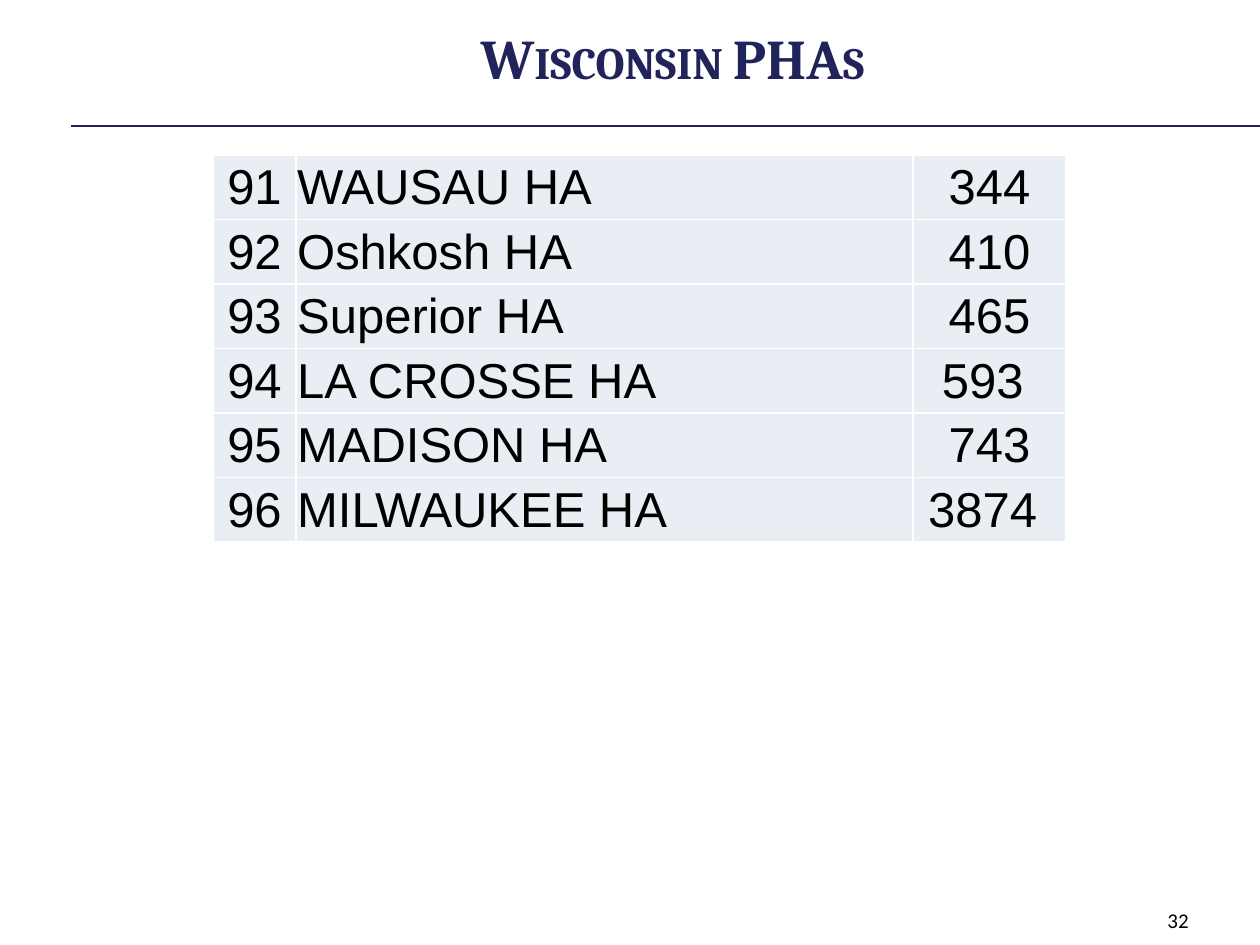
from dataclasses import dataclass

from lxml import etree
from pptx import Presentation
from pptx.dml.color import RGBColor
from pptx.enum.shapes import MSO_CONNECTOR
from pptx.enum.text import MSO_ANCHOR, PP_ALIGN
from pptx.oxml.ns import qn
from pptx.util import Emu, Inches, Pt

STRAIGHT = MSO_CONNECTOR.STRAIGHT
MIDDLE = MSO_ANCHOR.MIDDLE
LEFT, CENTER, RIGHT = PP_ALIGN.LEFT, PP_ALIGN.CENTER, PP_ALIGN.RIGHT


@dataclass(frozen=True)
class Theme:
    navy: str = "21245A"
    black: str = "000000"
    white: str = "FFFFFF"
    cell: str = "E9EDF4"
    title_size: int = 32
    table_size: int = 28
    number_size: int = 12


theme = Theme()


def px(length):
    return Emu(round(length * 914400 / 126))


def add_text(frame, text, align, font, size, color):
    frame.word_wrap = True
    para = frame.paragraphs[0]
    para.alignment = align
    span = para.add_run()
    span.text = text
    span.font.name = font
    span.font.size = Pt(size)
    span.font.color.rgb = RGBColor.from_string(color)
    return span


deck = Presentation()
deck.slide_width, deck.slide_height = px(1260), px(945)
page = deck.slides.add_slide(deck.slide_layouts[5])

rule = page.shapes.add_connector(STRAIGHT, px(71), px(126), px(1260), px(126))
rule.line.color.rgb = RGBColor.from_string(theme.navy)
rule.line.width = Pt(0.75)
etree.SubElement(rule._element.spPr, qn("a:effectLst"))

agencies = [
    ("91", "WAUSAU HA", "344"),
    ("92", "Oshkosh HA", "410"),
    ("93", "Superior HA", "465"),
    ("94", "LA CROSSE HA", "593 "),
    ("95", "MADISON HA", "743"),
    ("96", "MILWAUKEE HA", "3874 "),
]
widths = [83, 617, 153]
aligns = [CENTER, LEFT, CENTER]
table = page.shapes.add_table(
    len(agencies), len(widths), px(213), px(155), px(sum(widths)), px(387)
).table
table.first_row = False
table.horz_banding = False
for column, width in zip(table.columns, widths):
    column.width = px(width)

for row, agency in enumerate(agencies):
    for col, (text, align) in enumerate(zip(agency, aligns)):
        cell = table.cell(row, col)
        cell.vertical_anchor = MIDDLE
        cell.margin_left = cell.margin_right = cell.margin_top = Inches(0.01)
        cell.margin_bottom = 0
        for side in ("lnL", "lnR", "lnT", "lnB"):
            border = etree.SubElement(
                cell._tc.get_or_add_tcPr(), qn(f"a:{side}"), w=str(Pt(1))
            )
            paint = etree.SubElement(border, qn("a:solidFill"))
            etree.SubElement(paint, qn("a:srgbClr"), val=theme.white)
        cell.fill.solid()
        cell.fill.fore_color.rgb = RGBColor.from_string(theme.cell)
        add_text(cell.text_frame, text, align, "Arial", theme.table_size, theme.black)

title = page.shapes.title
title.left, title.top, title.width, title.height = px(116), px(21), px(1113), px(73)
title.text_frame.vertical_anchor = MIDDLE
span = add_text(
    title.text_frame, "Wisconsin PHAs", CENTER, "Cambria", theme.title_size, theme.navy
)
span.font.bold = True
span._r.get_or_add_rPr().set("cap", "small")

number = page.shapes.add_textbox(px(907), px(895), px(294), px(50))
number.text_frame.vertical_anchor = MIDDLE
add_text(number.text_frame, "32", RIGHT, "Calibri", theme.number_size, theme.black)

deck.save("out.pptx")
